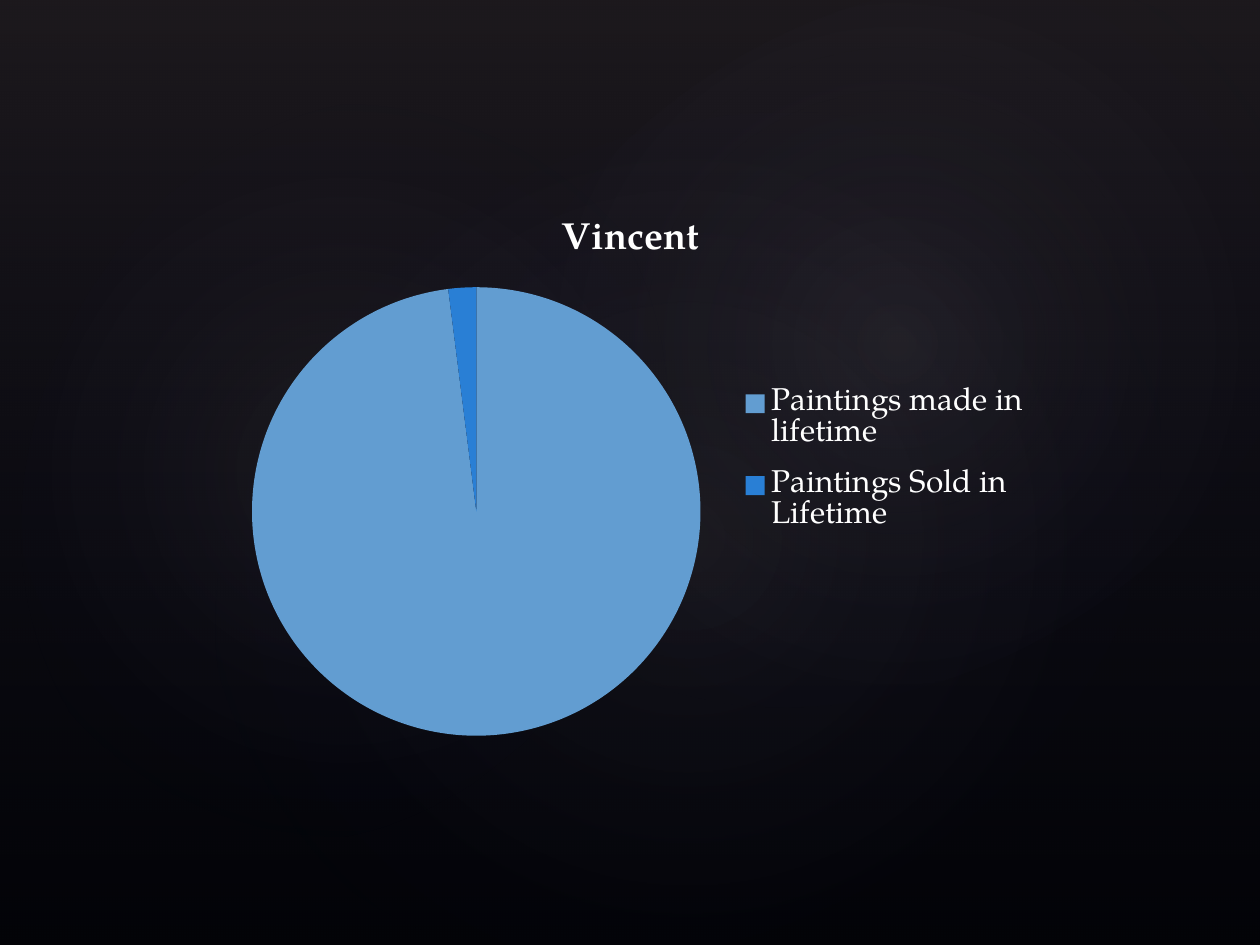
from lxml import etree
from pptx import Presentation
from pptx.chart import data as chart_data
from pptx.dml import color
from pptx.enum import chart as chart_enum, shapes
from pptx.oxml import ns, parse_xml
from pptx.util import Inches, Pt

FONT = "TeX Gyre Pagella"
COLORS = {
    "background": "000000",
    "text": "FFFFFF",
    "veil": "504652",
    "navy": "242852",
    "glow": "C4BCC6",
    "made": "629DD1",
    "sold": "297FD5",
}
LINEAR = '<a:lin ang="5400000" scaled="0"/>'
RADIAL = ('<a:path path="circle"><a:fillToRect l="50000" t="50000" '
          'r="50000" b="50000"/></a:path>')


def rgb(name):
    return color.RGBColor.from_string(COLORS[name])


def set_gradient(shape, stops, direction):
    """Fill with (position %, colour, opacity %) stops."""
    stop_xml = "".join(
        f'<a:gs pos="{position * 1000}"><a:srgbClr val="{COLORS[name]}">'
        f'<a:alpha val="{opacity * 1000}"/></a:srgbClr></a:gs>'
        for position, name, opacity in stops)
    gradient = parse_xml(
        f'<a:gradFill {ns.nsdecls("a")} rotWithShape="1">'
        f'<a:gsLst>{stop_xml}</a:gsLst>{direction}</a:gradFill>')
    shape.fill.background()
    properties = shape.element.spPr
    properties.replace(properties.find(ns.qn("a:noFill")), gradient)


def add_gradient_shape(slide, kind, box, stops, direction, rotation=0):
    shape = slide.shapes.add_shape(kind, *map(Inches, box))
    shape.rotation = rotation
    shape.shadow.inherit = False
    set_gradient(shape, stops, direction)
    shape.line.fill.background()


def add_glow(slide, box, rotation, opacity):
    stops = [(0, "glow", opacity), (58, "navy", 0)]
    add_gradient_shape(slide, shapes.MSO_SHAPE.OVAL, box, stops, RADIAL, rotation)


def style_font(font, size, bold=False):
    font.name, font.size, font.bold = FONT, Pt(size), bold
    font.color.rgb = rgb("text")


def set_layout(part, index, box, frame, modes):
    """Place a chart part at a box in inches, relative to the chart frame."""
    old_layout = part.find(ns.qn("c:layout"))
    if old_layout is not None:
        part.remove(old_layout)
    layout = etree.Element(ns.qn("c:layout"))
    manual = etree.SubElement(layout, ns.qn("c:manualLayout"))
    width, height = frame[2:]
    fractions = [length / whole for length, whole in zip(box, (width, height) * 2)]
    settings = {**modes, "xMode": "edge", "yMode": "edge", **dict(zip("xywh", fractions))}
    for tag, value in settings.items():
        etree.SubElement(manual, ns.qn(f"c:{tag}")).set("val", str(value))
    part.insert(index, layout)


def add_pie(slide, frame, title, slices):
    data = chart_data.CategoryChartData()
    data.categories = [label for label, _, _ in slices]
    data.add_series(title, [value for _, value, _ in slices])
    chart = slide.shapes.add_chart(
        chart_enum.XL_CHART_TYPE.PIE, *map(Inches, frame), data).chart
    style_font(chart.font, 18)

    # Title
    chart.has_title = True
    run = chart.chart_title.text_frame.paragraphs[0].add_run()
    run.text = title
    style_font(run.font, 21.6, bold=True)

    # Legend
    chart.has_legend = True
    legend = chart.legend
    legend.position = chart_enum.XL_LEGEND_POSITION.RIGHT
    legend.include_in_layout = False
    style_font(legend.font, 18)
    set_layout(legend._element, 1, (4.1, 1.4, 2.5, 1.45), frame, {})

    # Slices
    plot = chart.plots[0]
    plot.vary_by_categories = True
    for index, (_, _, name) in enumerate(slices):
        slice_format = plot.series[0].points[index].format
        slice_format.fill.solid()
        slice_format.fill.fore_color.rgb = rgb(name)
        slice_format.line.fill.background()
    set_layout(chart.element.chart.plotArea, 0, (0.33, 0.75, 3.56, 3.56), frame,
               {"layoutTarget": "inner"})


def main():
    presentation = Presentation()
    presentation.slide_width, presentation.slide_height = Inches(10), Inches(7.5)
    slide = presentation.slides.add_slide(presentation.slide_layouts[6])

    # Dark background with soft glows
    slide.background.fill.solid()
    slide.background.fill.fore_color.rgb = rgb("background")
    add_gradient_shape(slide, shapes.MSO_SHAPE.RECTANGLE, (0, 0, 10, 7.5),
                       [(0, "veil", 36), (100, "navy", 10)], LINEAR)
    add_glow(slide, (1.5, 1.14, 7.92, 6.24), 328.7, 7)
    add_glow(slide, (-0.3, 1.28, 6.06, 4.9), 294.3, 8)
    add_glow(slide, (3.58, 0.13, 7.09, 5.2), 328.7, 8)

    # Paintings made and sold
    add_pie(slide, (1.67, 1.53, 6.67, 4.44), "Vincent", [
        ("Paintings made in lifetime", 98, "made"),
        ("Paintings Sold in Lifetime", 2, "sold"),
    ])
    presentation.save("out.pptx")


if __name__ == "__main__":
    main()
